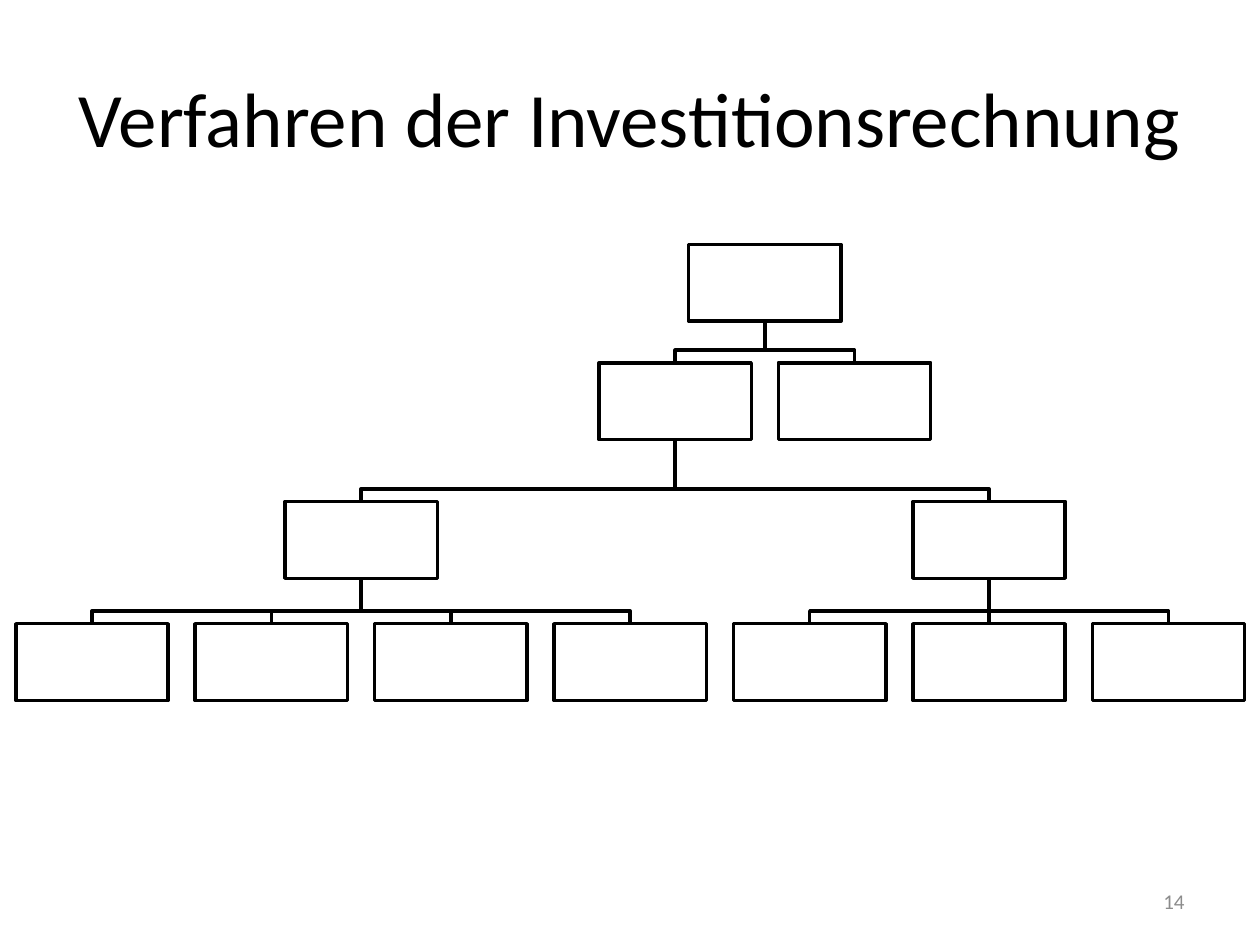
from lxml.etree import SubElement as Sub
from pptx import Presentation as Deck
from pptx.dml.color import RGBColor as Rgb
from pptx.enum.shapes import MSO_CONNECTOR as Conn, MSO_SHAPE as Kind
from pptx.enum.text import MSO_ANCHOR as Anchor, PP_ALIGN as Align
from pptx.oxml.ns import qn
from pptx.util import Inches, Pt

BOX_W, BOX_H = 1.21, 0.61
LEFT, STEP = 0.73, 1.424  # first box centre and distance between centres
TOPS = [1.94, 2.88, 3.98, 4.95]
DROP = 0.1  # from the crossbar to the child box


def color(code):
    return Rgb.from_string(code)


def ink(line):
    line.color.rgb = color("000000")
    line.width = Pt(2)


def write(shape, text, size, code, align):
    frame = shape.text_frame
    frame.word_wrap = True
    frame.vertical_anchor = Anchor.MIDDLE
    par = frame.paragraphs[0]
    par.text = text
    par.alignment = align
    par.font.name = "Calibri"
    par.font.size = Pt(size)
    par.font.color.rgb = color(code)


def add_box(slide, mid, level):
    box = slide.shapes.add_shape(
        Kind.RECTANGLE, Inches(mid - BOX_W / 2), Inches(TOPS[level]),
        Inches(BOX_W), Inches(BOX_H))
    box.shadow.inherit = False
    box.fill.solid()
    box.fill.fore_color.rgb = color("FFFFFF")
    ink(box.line)


def add_link(slide, start, end, level):
    """Join a parent box at the given level to a child one level below."""
    top, low = TOPS[level] + BOX_H, TOPS[level + 1]
    if abs(start - end) < 0.01:
        link = slide.shapes.add_connector(
            Conn.STRAIGHT, Inches(start), Inches(top), Inches(end), Inches(low))
        Sub(link._element.spPr, qn("a:effectLst"))
    else:
        bar = low - DROP
        path = slide.shapes.build_freeform(Inches(start), Inches(top))
        bends = [(start, bar), (end, bar), (end, low)]
        path.add_line_segments(
            [(Inches(x), Inches(y)) for x, y in bends], close=False)
        link = path.convert_to_shape()
        link.shadow.inherit = False
        link.fill.background()
    ink(link.line)


def add_tree(slide):
    # Each parent is centred over its children
    leaves = [LEFT + STEP * i for i in range(7)]
    groups = [leaves[:4], leaves[4:]]
    mids = [sum(group) / len(group) for group in groups]
    main_mid = sum(mids) / 2
    pair = [main_mid, main_mid + STEP]
    root = sum(pair) / 2

    # Links lie behind the boxes
    joins = [(root, pair, 0), (main_mid, mids, 1)]
    joins += [(mid, group, 2) for mid, group in zip(mids, groups)]
    for start, ends, level in joins:
        for end in ends:
            add_link(slide, start, end, level)

    for level, row in enumerate([[root], pair, mids, leaves]):
        for mid in row:
            add_box(slide, mid, level)


def main():
    deck = Deck()
    deck.slide_width, deck.slide_height = Inches(10), Inches(7.5)
    slide = deck.slides.add_slide(deck.slide_layouts[5])

    # Title
    title = slide.shapes.title
    title.left, title.top = Inches(0.5), Inches(0.3)
    title.width, title.height = Inches(9), Inches(1.25)
    write(title, "Verfahren der Investitionsrechnung", 44, "000000", Align.CENTER)

    add_tree(slide)

    # Page number
    page = slide.shapes.add_textbox(
        Inches(7.17), Inches(6.95), Inches(2.33), Inches(0.4))
    write(page, "14", 12, "8C8C8C", Align.RIGHT)

    deck.save("out.pptx")


if __name__ == "__main__":
    main()
